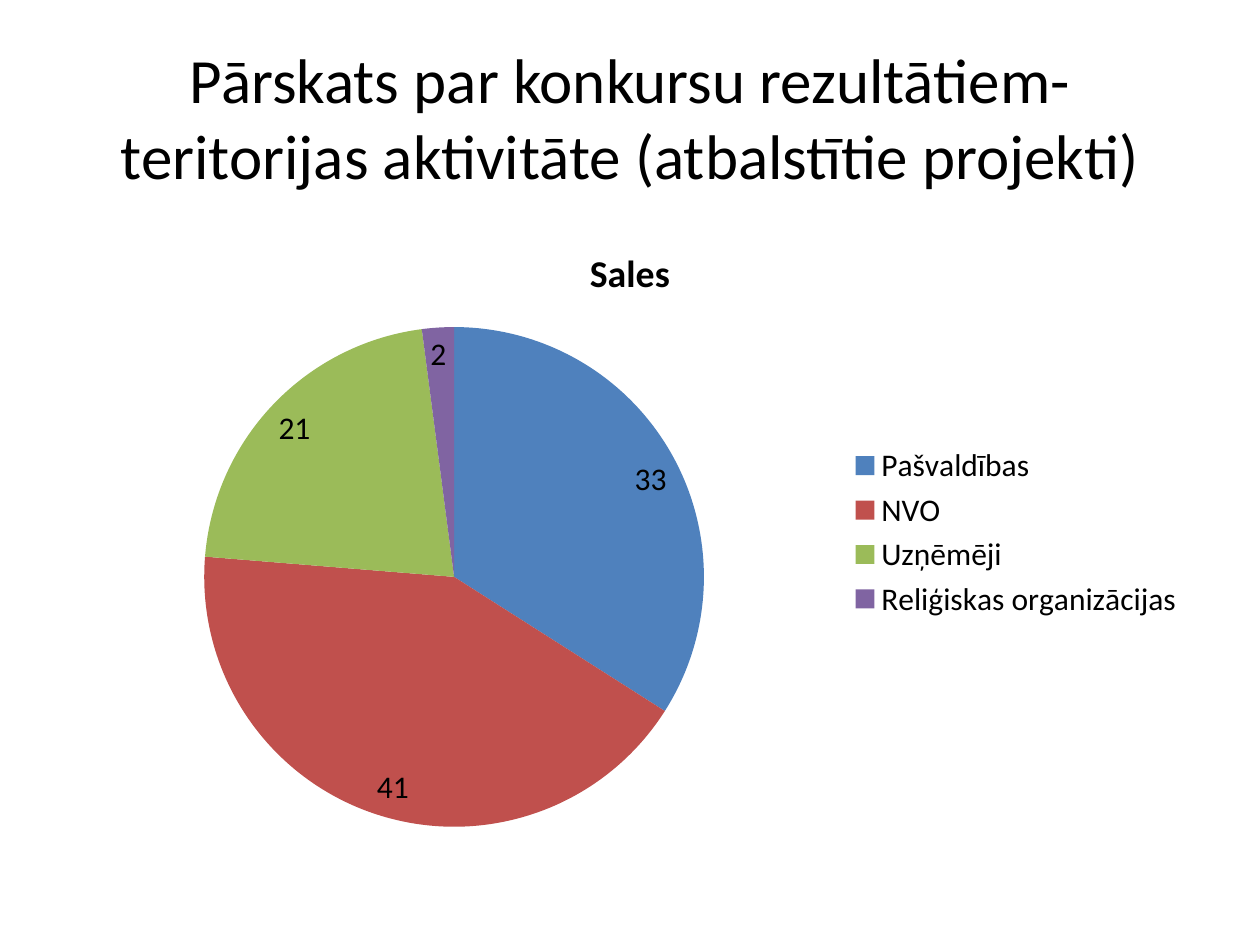
from dataclasses import dataclass

from pptx import Presentation
from pptx.chart.data import CategoryChartData
from pptx.dml.color import RGBColor
from pptx.enum.chart import XL_CHART_TYPE, XL_LABEL_POSITION, XL_LEGEND_POSITION
from pptx.enum.text import MSO_ANCHOR, PP_ALIGN
from pptx.util import Inches, Pt


@dataclass(frozen=True)
class Theme:
    font: str = "Calibri"
    text: str = "000000"
    slices: tuple = ("4F81BD", "C0504D", "9BBB59", "8064A2")
    title_size: float = 36
    chart_title_size: float = 21.6
    chart_size: float = 18


theme = Theme()


def style_font(font, size, bold=False):
    font.name = theme.font
    font.size = Pt(size)
    font.bold = bold
    font.color.rgb = RGBColor.from_string(theme.text)


def write_text(tf, text, size, bold=False, align=PP_ALIGN.CENTER):
    p = tf.paragraphs[0]
    p.alignment = align
    r = p.add_run()
    r.text = text
    style_font(r.font, size, bold)


prs = Presentation()
prs.slide_width, prs.slide_height = Inches(10), Inches(7.5)
s = prs.slides.add_slide(prs.slide_layouts[6])

# Heading
tf = s.shapes.add_textbox(Inches(0.5), Inches(0.3), Inches(9), Inches(1.25)).text_frame
tf.word_wrap = True
tf.vertical_anchor = MSO_ANCHOR.MIDDLE
write_text(
    tf,
    "Pārskats par konkursu rezultātiem- teritorijas aktivitāte (atbalstītie projekti)",
    theme.title_size,
)

# Supported projects by type of applicant
data = CategoryChartData()
data.categories = ["Pašvaldības", "NVO", "Uzņēmēji", "Reliģiskas organizācijas"]
data.add_series("Sales", (33, 41, 21, 2))
chart = s.shapes.add_chart(
    XL_CHART_TYPE.PIE, Inches(0.5), Inches(1.75), Inches(9), Inches(4.95), data
).chart
style_font(chart.font, theme.chart_size)

chart.has_title = True
write_text(chart.chart_title.text_frame, "Sales", theme.chart_title_size, bold=True)
chart.chart_title.include_in_layout = False

chart.has_legend = True
chart.legend.position = XL_LEGEND_POSITION.RIGHT
chart.legend.include_in_layout = False

plot = chart.plots[0]
plot.vary_by_categories = True
for i, color in enumerate(theme.slices):
    fill = plot.series[0].points[i].format.fill
    fill.solid()
    fill.fore_color.rgb = RGBColor.from_string(color)

plot.has_data_labels = True
labels = plot.data_labels
labels.show_value = True
labels.show_percentage = False
labels.position = XL_LABEL_POSITION.INSIDE_END
style_font(labels.font, theme.chart_size)

prs.save("out.pptx")
